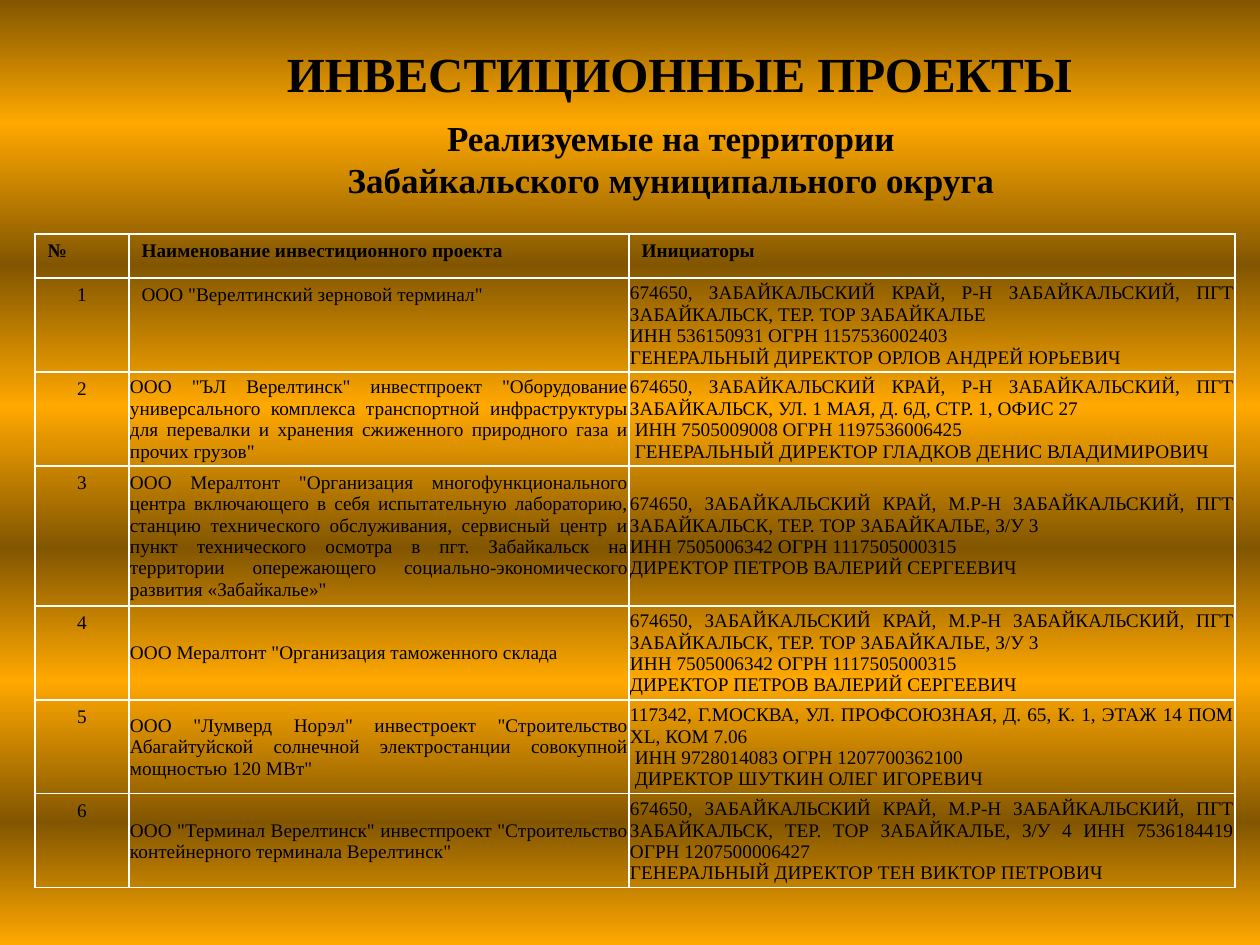
"""Build a slide listing the investment projects of a municipal district."""
from dataclasses import dataclass

import lxml.etree
import pptx
import pptx.dml.color
import pptx.enum.text
import pptx.oxml.ns
import pptx.util

EMU_PER_PIXEL = 914400 / 126
FONT = "Times New Roman"
BLACK, WHITE, BROWN, ORANGE = "000000", "FFFFFF", "825600", "FFA800"
ALIGN = pptx.enum.text.PP_ALIGN
ANCHOR = pptx.enum.text.MSO_ANCHOR
STOPS = (0, 13, 28, 43, 58, 72, 87, 100)
COLUMN_WIDTHS = (94, 500, 606)
ROW_HEIGHTS = (44, 94, 94, 140, 94, 94, 94)
HEADERS = ("№", "Наименование инвестиционного проекта", "Инициаторы")
DISTRICT = "674650, ЗАБАЙКАЛЬСКИЙ КРАЙ, {}Р-Н ЗАБАЙКАЛЬСКИЙ, ПГТ ЗАБАЙКАЛЬСК, "
OLD_DISTRICT, NEW_DISTRICT = DISTRICT.format(""), DISTRICT.format("М.")
ZONE = "ТЕР. ТОР ЗАБАЙКАЛЬЕ"
MERALTONT_INITIATOR = (
    f"{NEW_DISTRICT}{ZONE}, З/У 3\n"
    "ИНН 7505006342 ОГРН 1117505000315\n"
    "ДИРЕКТОР ПЕТРОВ ВАЛЕРИЙ СЕРГЕЕВИЧ"
)


@dataclass(frozen=True)
class Project:
    """One investment project with its initiator."""

    name: str
    initiator: str
    flush: bool = True


@dataclass(frozen=True)
class Heading:
    """A centred bold heading, measured in pixels."""

    text: str
    left: int
    top: int
    width: int
    height: int
    size: int
    indent: int = 0


HEADINGS = (
    Heading("ИНВЕСТИЦИОННЫЕ ПРОЕКТЫ", 263, 37, 833, 72, 28),
    Heading("Реализуемые на территории\nЗабайкальского муниципального округа",
            243, 110, 794, 97, 20, 62),
)
PROJECTS = (
    Project(
        'ООО "Верелтинский зерновой терминал"',
        f"{OLD_DISTRICT}{ZONE}\n"
        "ИНН 536150931 ОГРН 1157536002403\n"
        "ГЕНЕРАЛЬНЫЙ ДИРЕКТОР ОРЛОВ АНДРЕЙ ЮРЬЕВИЧ",
        flush=False,
    ),
    Project(
        'ООО "ЪЛ Верелтинск" инвестпроект "Оборудование универсального комплекса '
        "транспортной инфраструктуры для перевалки и хранения сжиженного "
        'природного газа и прочих грузов"',
        f"{OLD_DISTRICT}УЛ. 1 МАЯ, Д. 6Д, СТР. 1, ОФИС 27\n"
        " ИНН 7505009008 ОГРН 1197536006425\n"
        " ГЕНЕРАЛЬНЫЙ ДИРЕКТОР ГЛАДКОВ ДЕНИС ВЛАДИМИРОВИЧ",
    ),
    Project(
        'ООО Мералтонт "Организация многофункционального центра включающего в себя '
        "испытательную лабораторию, станцию технического обслуживания, сервисный "
        "центр и пункт технического осмотра в пгт. Забайкальск на территории "
        'опережающего социально-экономического развития «Забайкалье»"',
        MERALTONT_INITIATOR,
    ),
    Project('ООО Мералтонт "Организация таможенного склада', MERALTONT_INITIATOR),
    Project(
        'ООО "Лумверд Норэл" инвестроект "Строительство Абагайтуйской солнечной '
        'электростанции совокупной мощностью 120 МВт"',
        "117342, Г.МОСКВА, УЛ. ПРОФСОЮЗНАЯ, Д. 65, К. 1, ЭТАЖ 14 ПОМ XL, КОМ 7.06\n"
        " ИНН 9728014083 ОГРН 1207700362100\n"
        " ДИРЕКТОР ШУТКИН ОЛЕГ ИГОРЕВИЧ",
    ),
    Project(
        'ООО "Терминал Верелтинск" инвестпроект "Строительство контейнерного '
        'терминала Верелтинск"',
        f"{NEW_DISTRICT}{ZONE}, З/У 4 ИНН 7536184419 ОГРН 1207500006427\n"
        "ГЕНЕРАЛЬНЫЙ ДИРЕКТОР ТЕН ВИКТОР ПЕТРОВИЧ",
    ),
)


def px(length: int) -> int:
    """Turn pixels into EMU."""
    return round(length * EMU_PER_PIXEL)


def color(value: str) -> pptx.dml.color.RGBColor:
    """Turn a hex string into a colour."""
    return pptx.dml.color.RGBColor.from_string(value)


def add_xml(parent, tag: str, **attributes: str):
    """Append a DrawingML element and return it."""
    return lxml.etree.SubElement(parent, pptx.oxml.ns.qn(f"a:{tag}"), attributes)


def write_text(text_frame, text: str, size: int, bold: bool, alignment) -> None:
    """Fill a text frame and format its paragraphs."""
    text_frame.text = text
    for paragraph in text_frame.paragraphs:
        paragraph.alignment = alignment
        for run in paragraph.runs:
            run.font.name = FONT
            run.font.size = pptx.util.Pt(size)
            run.font.bold = bold
            run.font.color.rgb = color(BLACK)


def paint_background(slide) -> None:
    """Give the slide alternating brown and orange bands."""
    fill = slide.background.fill
    fill.gradient()
    fill.gradient_angle = 270
    stop_list = next(slide.element.iter(pptx.oxml.ns.qn("a:gsLst")))
    for stop in list(stop_list):
        stop_list.remove(stop)
    for index, position in enumerate(STOPS):
        stop = add_xml(stop_list, "gs", pos=str(position * 1000))
        add_xml(stop, "srgbClr", val=ORANGE if index % 2 else BROWN)


def add_heading(slide, heading: Heading) -> None:
    """Draw one heading."""
    shape = slide.shapes.add_textbox(
        px(heading.left), px(heading.top), px(heading.width), px(heading.height))
    shape.text_frame.word_wrap = True
    write_text(shape.text_frame, heading.text, heading.size, True, ALIGN.CENTER)
    for paragraph in shape.text_frame.paragraphs:
        paragraph._p.get_or_add_pPr().set("indent", str(px(heading.indent)))


def write_cell(cell, text: str, bold: bool = False, flush: bool = False,
               alignment=ALIGN.JUSTIFY) -> None:
    """Write a transparent cell with white borders."""
    write_text(cell.text_frame, text, 11, bold, alignment)
    if flush:
        cell.vertical_anchor = ANCHOR.MIDDLE
        cell.margin_left = cell.margin_right = cell.margin_top = px(1)
        cell.margin_bottom = 0
    properties = cell._tc.get_or_add_tcPr()
    for side in ("lnL", "lnR", "lnT", "lnB"):
        line = add_xml(properties, side, w=str(pptx.util.Pt(1)))
        add_xml(add_xml(line, "solidFill"), "srgbClr", val=WHITE)
    cell.fill.background()


def add_project_table(slide) -> None:
    """Draw the table of projects."""
    table = slide.shapes.add_table(
        len(ROW_HEIGHTS), len(COLUMN_WIDTHS), px(35), px(234),
        px(sum(COLUMN_WIDTHS)), px(sum(ROW_HEIGHTS))).table
    table.first_row = table.horz_banding = False
    for column, width in zip(table.columns, COLUMN_WIDTHS):
        column.width = px(width)
    for row, height in zip(table.rows, ROW_HEIGHTS):
        row.height = px(height)
    for index, header in enumerate(HEADERS):
        write_cell(table.cell(0, index), header, bold=True)
    for number, project in enumerate(PROJECTS, start=1):
        write_cell(table.cell(number, 0), str(number), alignment=ALIGN.CENTER)
        write_cell(table.cell(number, 1), project.name, flush=project.flush)
        write_cell(table.cell(number, 2), project.initiator, flush=True)


def main() -> None:
    """Build and save the presentation."""
    presentation = pptx.Presentation()
    presentation.slide_width, presentation.slide_height = px(1260), px(945)
    slide = presentation.slides.add_slide(presentation.slide_layouts[6])
    paint_background(slide)
    for heading in HEADINGS:
        add_heading(slide, heading)
    add_project_table(slide)
    presentation.save("out.pptx")


if __name__ == "__main__":
    main()
